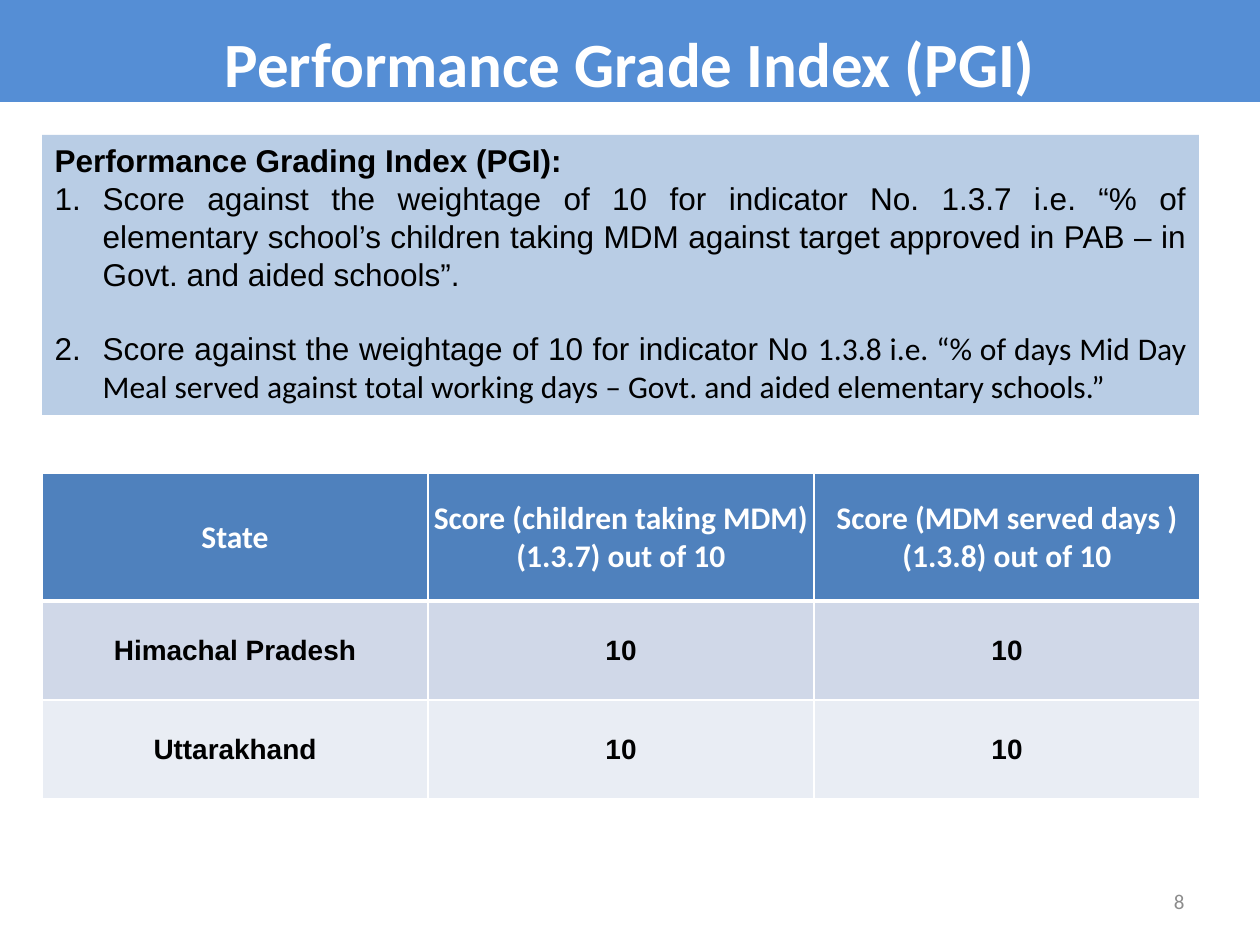
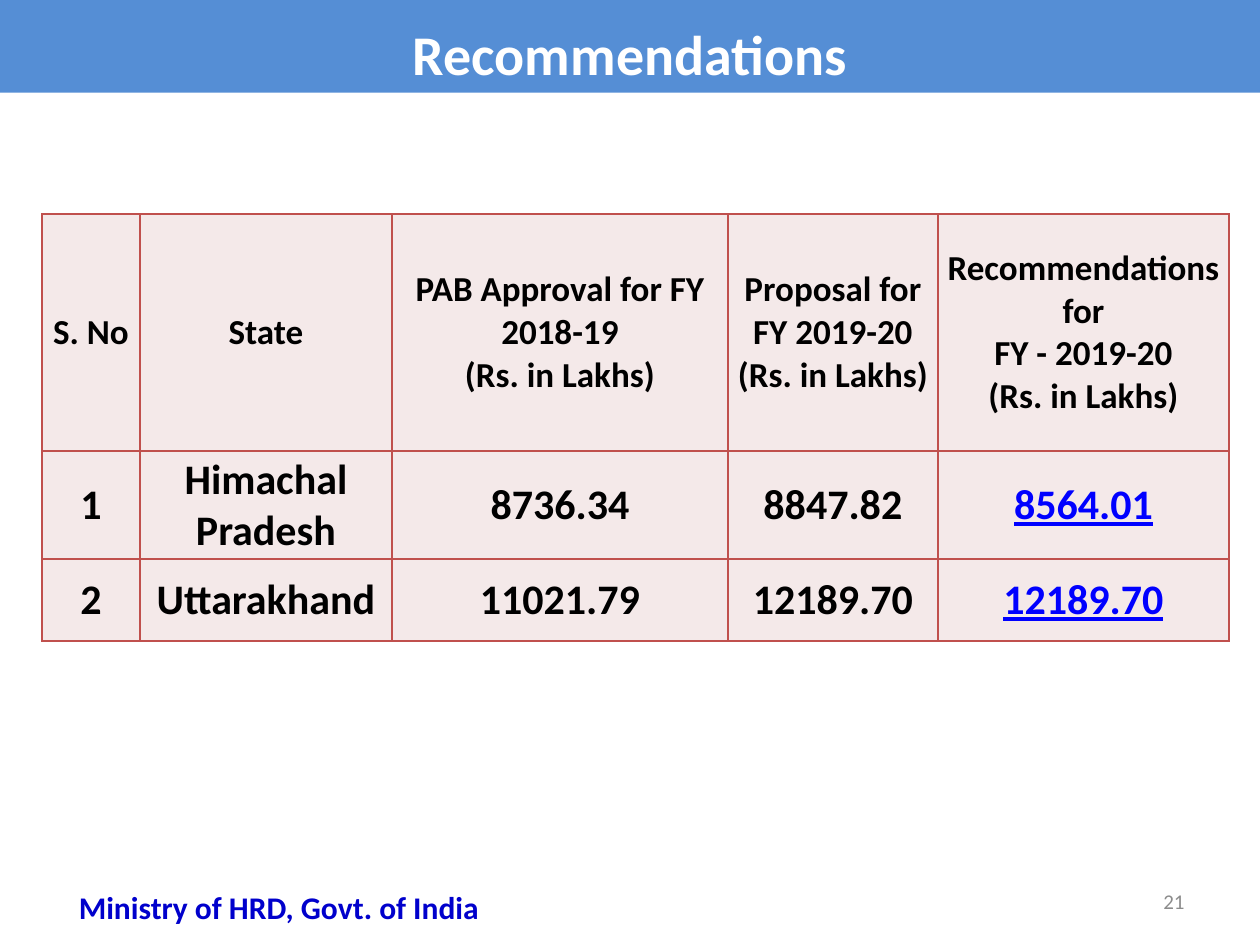
from dataclasses import dataclass
from lxml.etree import SubElement
from pptx import Presentation
from pptx.dml.color import RGBColor
from pptx.enum.text import MSO_ANCHOR, MSO_AUTO_SIZE, PP_ALIGN
from pptx.oxml.ns import qn
from pptx.util import Pt

PX_PER_INCH = 126
EMU_PER_PX = 914400 / PX_PER_INCH


@dataclass(frozen=True)
class Theme:
    heading_font: str = "Calibri"
    text_font: str = "Arial"
    white: str = "FFFFFF"
    black: str = "000000"
    band: str = "558ED5"
    panel: str = "B9CDE5"
    header: str = "4F81BD"
    stripe_dark: str = "D0D8E8"
    stripe_light: str = "E9EDF4"
    budget: str = "F4E9E9"
    budget_line: str = "C0504D"
    highlight: str = "0000FF"
    ministry: str = "0000CC"
    page: str = "8C8C8C"
    page_size: int = 12
    score_size: int = 16
    text_size: int = 18
    budget_header_size: int = 20
    budget_size: int = 24


THEME = Theme()
TIGHT = (1, 1, 1, 0)
ROOMY = (9, 0, 9, 0)


def px(value):
    return round(value * EMU_PER_PX)


def set_values(target, values):
    for key, value in values.items():
        setattr(target, key, value)


def type_style(size, color=THEME.black, name=THEME.heading_font, **extra):
    return {"size": Pt(size), "name": name, "color": color, **extra}


def style_font(font, style):
    set_values(font, {key: value for key, value in style.items() if key != "color"})
    font.color.rgb = RGBColor.from_string(style["color"])


def style_frame(frame, style, align, **paragraph_values):
    for paragraph in frame.paragraphs:
        set_values(paragraph, {"alignment": align, **paragraph_values})
        for run in paragraph.runs:
            style_font(run.font, style)


def place(shape, box):
    set_values(shape, dict(zip(("left", "top", "width", "height"), map(px, box))))


def paint(target, color):
    target.fill.solid()
    target.fill.fore_color.rgb = RGBColor.from_string(color)


def add_title(slide, text, top, height, size):
    title = slide.shapes.title
    place(title, (0, top, 1260, height))
    paint(title, THEME.band)
    frame = title.text_frame
    frame.text = text
    set_values(frame, {"vertical_anchor": MSO_ANCHOR.MIDDLE, "word_wrap": True,
                       "auto_size": MSO_AUTO_SIZE.SHAPE_TO_FIT_TEXT})
    style_frame(frame, type_style(size, THEME.white, bold=True),
                PP_ALIGN.CENTER, line_spacing=1.4)


def add_label(slide, text, box, style, align, anchor=MSO_ANCHOR.TOP):
    label = slide.shapes.add_textbox(*map(px, box))
    frame = label.text_frame
    frame.text = text
    set_values(frame, {"word_wrap": True, "vertical_anchor": anchor})
    style_frame(frame, style, align)


def add_page_number(slide, number):
    add_label(slide, str(number), (903, 876, 294, 50),
              type_style(THEME.page_size, THEME.page), PP_ALIGN.RIGHT, MSO_ANCHOR.MIDDLE)


def add_indicator_list(slide, heading, indicators, box):
    panel = slide.placeholders[1]
    place(panel, box)
    paint(panel, THEME.panel)
    frame = panel.text_frame
    set_values(frame, {"word_wrap": True, "auto_size": MSO_AUTO_SIZE.NONE})
    heading_parts = [(heading, THEME.text_font)]
    for index, parts in enumerate([heading_parts, *indicators]):
        paragraph = frame.paragraphs[0] if index == 0 else frame.add_paragraph()
        set_values(paragraph, {"alignment": PP_ALIGN.JUSTIFY,
                               "space_before": Pt(21 if index > 1 else 0)})
        for text, font_name in parts:
            run = paragraph.add_run()
            run.text = text
            style_font(run.font, type_style(THEME.text_size, name=font_name, bold=index == 0))
        indent = px(48) if index else 0
        properties = paragraph._p.get_or_add_pPr()
        properties.set("marL", str(indent))
        properties.set("indent", str(-indent))
        if index:
            SubElement(properties, qn("a:buFont"), typeface=THEME.text_font)
            SubElement(properties, qn("a:buAutoNum"), type="arabicPeriod")
        else:
            SubElement(properties, qn("a:buNone"))


def add_borders(cell, color, widths):
    properties = cell._tc.get_or_add_tcPr()
    for side in "LRTB":
        line = SubElement(properties, qn(f"a:ln{side}"), w=str(Pt(widths.get(side, 1))))
        fill = SubElement(line, qn("a:solidFill"))
        SubElement(fill, qn("a:srgbClr"), val=color)


def add_grid(slide, origin, columns, heights, rows, border, cell_look):
    box = (*origin, sum(columns), sum(heights))
    table = slide.shapes.add_table(len(rows), len(columns), *map(px, box)).table
    set_values(table, {"first_row": False, "horz_banding": False})
    for column, width in zip(table.columns, columns):
        column.width = px(width)
    for row, height in zip(table.rows, heights):
        row.height = px(height)
    sides = ("margin_left", "margin_top", "margin_right", "margin_bottom")
    for row_index, texts in enumerate(rows):
        for column_index, text in enumerate(texts):
            fill, style, margins, widths = cell_look(row_index, column_index)
            cell = table.cell(row_index, column_index)
            cell.text_frame.text = text
            set_values(cell, {"vertical_anchor": MSO_ANCHOR.MIDDLE,
                              **dict(zip(sides, map(px, margins)))})
            add_borders(cell, border, widths)
            paint(cell, fill)
            style_frame(cell.text_frame, style, PP_ALIGN.CENTER)


def score_look(row, column):
    if row == 0:
        header_style = type_style(THEME.text_size, THEME.white, bold=True)
        return THEME.header, header_style, TIGHT, {"B": 3}
    fill = THEME.stripe_dark if row % 2 else THEME.stripe_light
    style = type_style(THEME.score_size, name=THEME.text_font, bold=True)
    return fill, style, TIGHT, {"T": 3} if row == 1 else {}


def budget_look(row, column):
    recommended = row > 0 and column == 4
    size = THEME.budget_size if row else THEME.budget_header_size
    color = THEME.highlight if recommended else THEME.black
    style = type_style(size, color, bold=True, underline=recommended)
    return THEME.budget, style, TIGHT if row and column else ROOMY, {}


def build_index_slide(deck):
    slide = deck.slides.add_slide(deck.slide_layouts[1])
    add_title(slide, "Performance Grade Index (PGI)", -8, 110, 36)
    indicators = [
        [("Score against the weightage of 10 for indicator No. 1.3.7 i.e. “% of elementary "
          "school’s children taking MDM against target approved in PAB – in Govt. and "
          "aided schools”.", THEME.text_font)],
        [("Score against the weightage of 10 for indicator No ", THEME.text_font),
         ("1.3.8 i.e. “% of days Mid Day Meal served against total working days – "
          "Govt. and aided elementary schools.”", THEME.heading_font)],
    ]
    add_indicator_list(slide, "Performance Grading Index (PGI):", indicators,
                       (42, 135, 1157, 280))
    scores = [
        ("State", "Score (children taking MDM)\n(1.3.7) out of 10",
         "Score (MDM served days )\n(1.3.8) out of 10"),
        ("Himachal Pradesh", "10", "10"),
        ("Uttarakhand", "10", "10"),
    ]
    add_grid(slide, (42, 473), [386] * 3, [128, 99, 99], scores, THEME.white, score_look)
    add_page_number(slide, 8)


def build_recommendations_slide(deck):
    slide = deck.slides.add_slide(deck.slide_layouts[5])
    add_title(slide, "Recommendations", -9, 98, 32)
    add_label(slide, "Ministry of HRD, Govt. of India", (32, 882, 494, 50),
              type_style(THEME.text_size, THEME.ministry, bold=True), PP_ALIGN.CENTER)
    budgets = [
        ("S. No", "State", "PAB Approval for FY 2018-19\n(Rs. in Lakhs)",
         "Proposal for\nFY 2019-20\n(Rs. in Lakhs)",
         "Recommendations for\nFY - 2019-20\n(Rs. in Lakhs)"),
        ("1", "Himachal Pradesh", "8736.34", "8847.82", "8564.01"),
        ("2", "Uttarakhand", "11021.79", "12189.70", "12189.70"),
    ]
    add_grid(slide, (42, 214), [98, 252, 336, 210, 291], [237, 108, 82], budgets,
             THEME.budget_line, budget_look)
    add_page_number(slide, 21)


def main():
    deck = Presentation()
    set_values(deck, {"slide_width": px(1260), "slide_height": px(945)})
    build_index_slide(deck)
    build_recommendations_slide(deck)
    deck.save("out.pptx")


if __name__ == "__main__":
    main()
